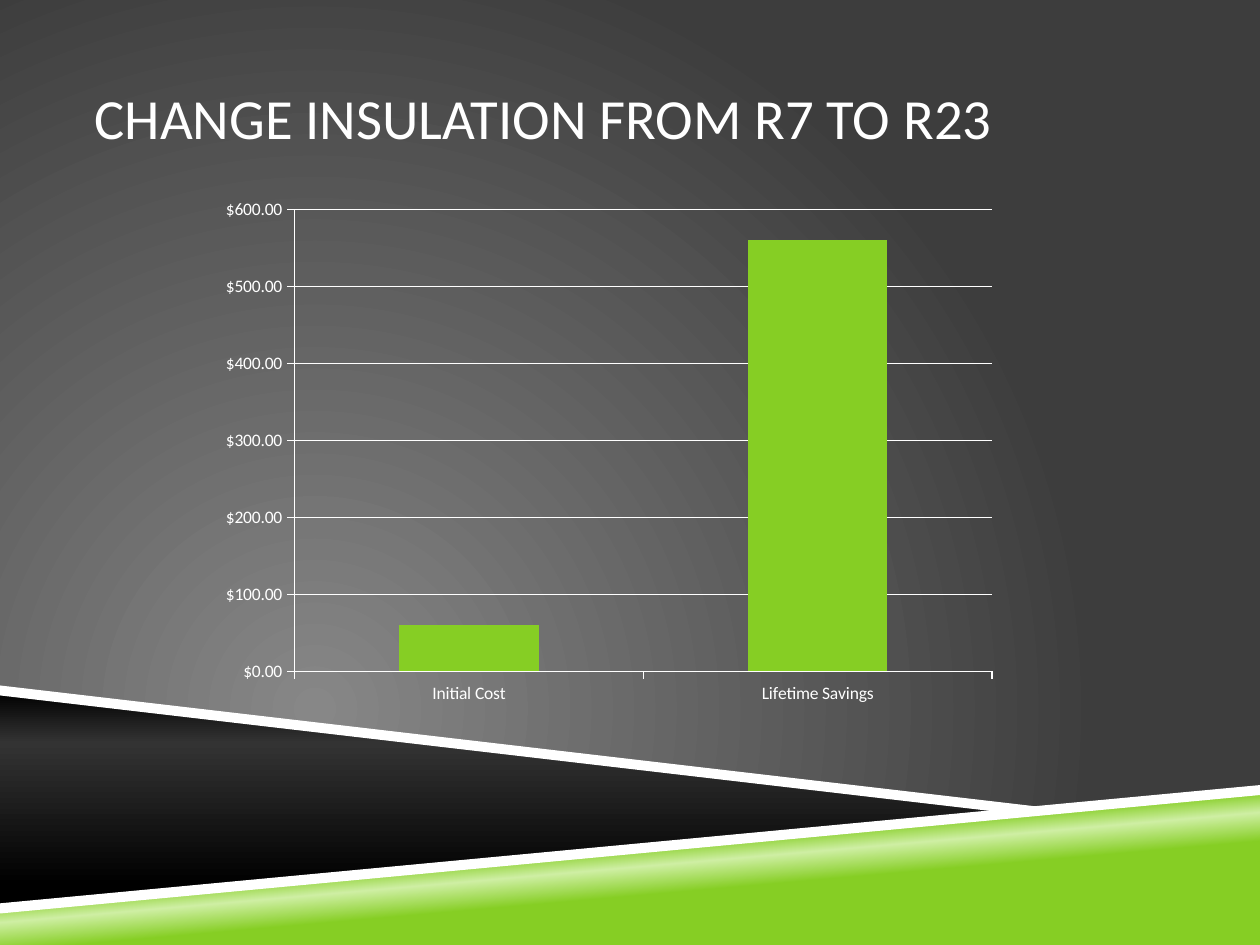
"""Build the insulation slide: cost and savings columns above slanted bands."""
from typing import NamedTuple, Optional

import pptx
import pptx.chart.data
import pptx.dml.color
import pptx.enum.chart
import pptx.enum.text
import pptx.oxml
import pptx.oxml.ns
import pptx.util

Pt = pptx.util.Pt
FONT = "Calibri"
WHITE = "FFFFFF"
GREEN = "86CE24"
WIDTH, HEIGHT = 720, 540


class Gradient(NamedTuple):
    """Colour stops in percent, and either a linear angle or a circular focus."""
    stops: list[tuple[int, str]]
    angle: Optional[int] = None
    focus: tuple[int, int, int, int] = (50, 50, 50, 50)


class Band(NamedTuple):
    """A polygon in points with a plain colour or a gradient."""
    corners: list[tuple[float, float]]
    color: str = WHITE
    gradient: Optional[Gradient] = None


BACKDROP = Gradient([(0, "878787"), (100, "3D3D3D")], focus=(50, 100, 100, 50))
BLACK_GLOSS = Gradient([(0, "000000"), (24, "333333"), (90, "000000")], angle=90)
GREEN_GLOSS = Gradient([(39, GREEN), (50, "CFEFA4"), (58, GREEN)], angle=265)

BANDS = [
    Band([(0, 394.6), (586, 463), (0, 518.4)], gradient=BLACK_GLOSS),
    Band([(0, 519), (WIDTH, 451.4), (WIDTH, HEIGHT), (0, HEIGHT)], gradient=GREEN_GLOSS),
    Band([(0, 391.7), (0, 397.4), (574.6, 464.4), (604, 462.2)]),
    Band([(WIDTH, 448.6), (0, 516.2), (0, 522), (WIDTH, 454.3)]),
]


def rgb(color: str) -> pptx.dml.color.RGBColor:
    """Turn a hex string into a colour."""
    return pptx.dml.color.RGBColor.from_string(color)


def set_gradient(properties, gradient: Gradient) -> None:
    """Replace the solid fill of a property element by a gradient."""
    stops = "".join(
        f'<a:gs pos="{position * 1000}"><a:srgbClr val="{color}"/></a:gs>'
        for position, color in gradient.stops
    )
    if gradient.angle is None:
        sides = " ".join(
            f'{side}="{percent * 1000}"' for side, percent in zip("ltrb", gradient.focus)
        )
        shading = f'<a:path path="circle"><a:fillToRect {sides}/></a:path>'
    else:
        shading = f'<a:lin ang="{gradient.angle * 60000}" scaled="0"/>'
    fill = pptx.oxml.parse_xml(
        f'<a:gradFill {pptx.oxml.ns.nsdecls("a")} rotWithShape="1">'
        f"<a:gsLst>{stops}</a:gsLst>{shading}</a:gradFill>"
    )
    properties.replace(properties.find(pptx.oxml.ns.qn("a:solidFill")), fill)


def set_font(font, size: float) -> None:
    """Apply the white slide font at a size in points."""
    font.name = FONT
    font.size = Pt(size)
    font.color.rgb = rgb(WHITE)


def paint_background(slide) -> None:
    """Fill the slide with the circular grey gradient."""
    slide.background.fill.solid()
    set_gradient(slide.element.find(".//" + pptx.oxml.ns.qn("p:bgPr")), BACKDROP)


def draw_band(slide, band: Band) -> None:
    """Draw one slanted band without outline."""
    corners = [(Pt(x), Pt(y)) for x, y in band.corners]
    builder = slide.shapes.build_freeform(*corners[0])
    builder.add_line_segments(corners[1:], close=True)
    shape = builder.convert_to_shape()
    shape.shadow.inherit = False
    shape.line.fill.background()
    shape.fill.solid()
    shape.fill.fore_color.rgb = rgb(band.color)
    if band.gradient:
        set_gradient(shape.element.spPr, band.gradient)


def write_title(slide, wording: str) -> None:
    """Place and format the title placeholder."""
    title = slide.shapes.title
    title.left, title.top, title.width, title.height = Pt(54), Pt(21.6), Pt(612), Pt(90)
    frame = title.text_frame
    frame.text = wording
    frame.auto_size = pptx.enum.text.MSO_AUTO_SIZE.NONE
    frame.vertical_anchor = pptx.enum.text.MSO_ANCHOR.MIDDLE
    frame.margin_left = frame.margin_right = 0
    frame.margin_top = frame.margin_bottom = Pt(3.6)
    paragraph = frame.paragraphs[0]
    paragraph.alignment = pptx.enum.text.PP_ALIGN.LEFT
    set_font(paragraph.font, 32.4)


def style_line(line) -> None:
    """Make an axis line or gridline thin and white."""
    line.color.rgb = rgb(WHITE)
    line.width = Pt(0.75)


def add_savings_chart(slide) -> None:
    """Add the column chart of cost against savings."""
    savings = pptx.chart.data.CategoryChartData()
    savings.categories = ["Initial Cost", "Lifetime Savings"]
    savings.add_series("Series 1", [60, 560])
    chart = slide.shapes.add_chart(
        pptx.enum.chart.XL_CHART_TYPE.COLUMN_CLUSTERED,
        Pt(120), Pt(108), Pt(456), Pt(300), savings,
    ).chart
    chart.has_title = False
    chart.has_legend = False
    set_font(chart.font, 10)

    plot = chart.plots[0]
    plot.gap_width = 150
    plot.vary_by_categories = False
    columns = plot.series[0].format.fill
    columns.solid()
    columns.fore_color.rgb = rgb(GREEN)

    for axis in (chart.category_axis, chart.value_axis):
        axis.major_tick_mark = pptx.enum.chart.XL_TICK_MARK.OUTSIDE
        axis.minor_tick_mark = pptx.enum.chart.XL_TICK_MARK.NONE
        style_line(axis.format.line)
    dollars = chart.value_axis
    dollars.minimum_scale, dollars.maximum_scale, dollars.major_unit = 0, 600, 100
    dollars.has_major_gridlines = True
    style_line(dollars.major_gridlines.format.line)
    dollars.tick_labels.number_format = '"$"#,##0.00'
    dollars.tick_labels.number_format_is_linked = False


def main() -> None:
    """Build and save the slide."""
    presentation = pptx.Presentation()
    presentation.slide_width, presentation.slide_height = Pt(WIDTH), Pt(HEIGHT)
    slide = presentation.slides.add_slide(presentation.slide_layouts[5])
    paint_background(slide)
    for band in BANDS:
        draw_band(slide, band)
    write_title(slide, "CHANGE INSULATION FROM R7 TO R23")
    add_savings_chart(slide)
    presentation.save("out.pptx")


if __name__ == "__main__":
    main()
